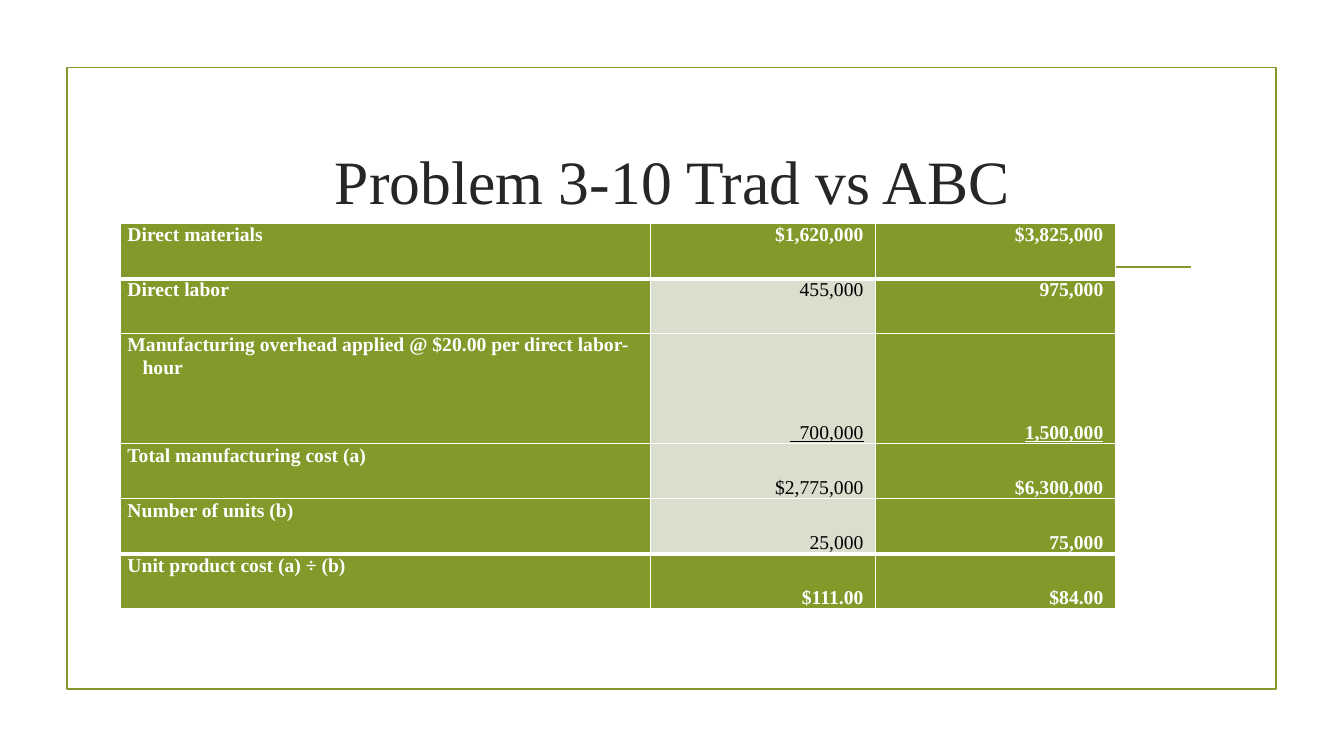
from dataclasses import dataclass

import pptx
import pptx.dml.color
import pptx.enum.shapes
import pptx.enum.text
import pptx.oxml
import pptx.oxml.ns
import pptx.util

FONT = "Times New Roman"
GREEN, PALE, WHITE, BLACK, DARK = "83992A", "D9DECD", "FFFFFF", "000000", "262626"
ALIGN = pptx.enum.text.PP_ALIGN
ANCHOR = pptx.enum.text.MSO_ANCHOR
HAIRLINE, HEAVY = 1, 3


@dataclass
class CostRow:
    label: str
    first: str
    second: str
    height: int = 1
    anchor: ANCHOR = ANCHOR.BOTTOM
    pale: bool = True
    underline: bool = False
    top: int = HAIRLINE
    bottom: int = HAIRLINE


@dataclass
class Box:
    """An area in percent of the slide's width and height."""
    left: float
    top: float
    width: float
    height: float


COSTS = [
    CostRow("Direct materials", "$1,620,000", "$3,825,000",
            anchor=ANCHOR.TOP, pale=False, bottom=HEAVY),
    CostRow("Direct labor", "455,000", "975,000", anchor=ANCHOR.TOP, top=HEAVY),
    CostRow("Manufacturing overhead applied @ $20.00 per direct labor-hour",
            "  700,000", "1,500,000", height=2, underline=True),
    CostRow("Total manufacturing cost (a)", "$2,775,000", "$6,300,000"),
    CostRow("Number of units (b)", "25,000", "75,000", bottom=HEAVY),
    CostRow("Unit product cost (a) ÷ (b)", "$111.00", "$84.00", pale=False, top=HEAVY),
]
COLUMN_SHARES = [39.46, 16.73, 17.85]
ROW_SHARE = 7.28
FRAME = Box(4.97, 8.93, 90, 82.27)
TITLE = Box(10.65, 14.27, 78.77, 19.07)
RULE = Box(11.48, 35.33, 77.12, 0)
TABLE = Box(8.96, 29.6, sum(COLUMN_SHARES), ROW_SHARE * sum(c.height for c in COSTS))

prs = pptx.Presentation()
prs.slide_width = pptx.util.Inches(13.33)
prs.slide_height = pptx.util.Inches(7.5)


def rgb(color: str) -> pptx.dml.color.RGBColor:
    return pptx.dml.color.RGBColor.from_string(color)


def across(share: float) -> int:
    return round(prs.slide_width * share / 100)


def down(share: float) -> int:
    return round(prs.slide_height * share / 100)


def place(box: Box) -> tuple[int, int, int, int]:
    return across(box.left), down(box.top), across(box.width), down(box.height)


def style_line(line, color: str = GREEN, width: float = 1.25) -> None:
    line.color.rgb = rgb(color)
    line.width = pptx.util.Pt(width)


def style_run(p, size: int, color: str, bold: bool = False, underline: bool = False) -> None:
    font = p.runs[0].font
    font.name, font.size, font.bold = FONT, pptx.util.Pt(size), bold
    font.color.rgb = rgb(color)
    if underline:
        font.underline = True


def add_frame(s) -> None:
    sp = s.shapes.add_shape(pptx.enum.shapes.MSO_SHAPE.RECTANGLE, *place(FRAME))
    sp.shadow.inherit = False
    sp.fill.background()
    style_line(sp.line)


def add_rule(s) -> None:
    x, y, width, height = place(RULE)
    sp = s.shapes.add_connector(pptx.enum.shapes.MSO_CONNECTOR.STRAIGHT,
                                x, y, x + width, y + height)
    style_line(sp.line)
    sp._element.spPr.append(pptx.oxml.parse_xml(
        f'<a:effectLst {pptx.oxml.ns.nsdecls("a")}/>'))


def add_title(s, text: str) -> None:
    tf = s.shapes.add_textbox(*place(TITLE)).text_frame
    tf.word_wrap = True
    tf.vertical_anchor = ANCHOR.MIDDLE
    tf.text = text
    p = tf.paragraphs[0]
    p.alignment = ALIGN.CENTER
    style_run(p, 44, DARK)


def set_borders(cell, top: int, bottom: int) -> None:
    widths = {"L": HAIRLINE, "R": HAIRLINE, "T": top, "B": bottom}
    tcPr = cell._tc.get_or_add_tcPr()
    for i, (side, width) in enumerate(widths.items()):
        tcPr.insert(i, pptx.oxml.parse_xml(
            f'<a:ln{side} {pptx.oxml.ns.nsdecls("a")} w="{pptx.util.Pt(width)}">'
            f'<a:solidFill><a:srgbClr val="{WHITE}"/></a:solidFill></a:ln{side}>'))


def fill_cell(cell, text: str, cost: CostRow, col: int) -> None:
    is_label, is_pale = col == 0, col == 1 and cost.pale
    cell.margin_left = cell.margin_right = pptx.util.Inches(0.07)
    cell.margin_top = cell.margin_bottom = 0
    cell.vertical_anchor = ANCHOR.TOP if is_label else cost.anchor
    cell.fill.solid()
    cell.fill.fore_color.rgb = rgb(PALE if is_pale else GREEN)
    set_borders(cell, cost.top, cost.bottom)
    cell.text_frame.text = text
    p = cell.text_frame.paragraphs[0]
    p.line_spacing = pptx.util.Pt(16)
    pPr = p._p.get_or_add_pPr()
    indent = pptx.util.Inches(0.15)
    if is_label:
        pPr.set("marL", str(indent))
        pPr.set("indent", str(-indent))
    else:
        p.alignment = ALIGN.RIGHT
        pPr.set("marR", str(pptx.util.Inches(0.05)))
    style_run(p, 14, BLACK if is_pale else WHITE, bold=not is_pale,
              underline=cost.underline and not is_label)


def add_cost_table(s) -> None:
    table = s.shapes.add_table(len(COSTS), len(COLUMN_SHARES), *place(TABLE)).table
    table.horz_banding = False
    for column, share in zip(table.columns, COLUMN_SHARES):
        column.width = across(share)
    for i, cost in enumerate(COSTS):
        table.rows[i].height = down(ROW_SHARE * cost.height)
        for col, text in enumerate((cost.label, cost.first, cost.second)):
            fill_cell(table.cell(i, col), text, cost, col)


def main() -> None:
    s = prs.slides.add_slide(prs.slide_layouts[6])
    add_frame(s)
    add_rule(s)
    add_title(s, "Problem 3-10 Trad vs ABC")
    add_cost_table(s)
    prs.save("out.pptx")


if __name__ == "__main__":
    main()
